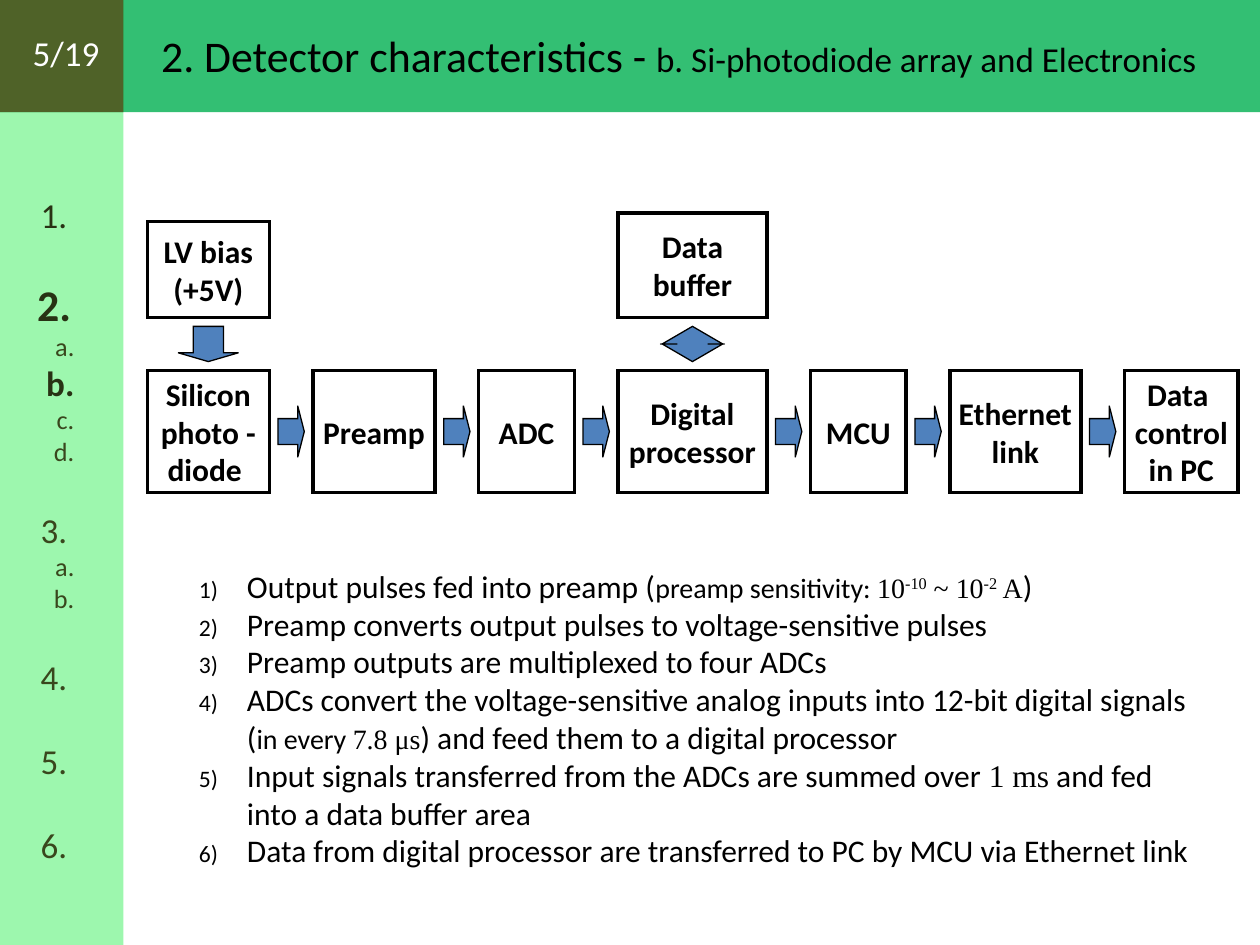
import pptx
import pptx.util
import pptx.dml.color
import pptx.enum.shapes
import pptx.enum.text
import pptx.oxml
import pptx.oxml.ns
from pptx.util import Cm

RGBColor = pptx.dml.color.RGBColor
Shapes = pptx.enum.shapes.MSO_SHAPE
Align = pptx.enum.text.PP_ALIGN

BLACK = RGBColor(0x00, 0x00, 0x00)
WHITE = RGBColor(0xFF, 0xFF, 0xFF)
MINT = RGBColor(0x7D, 0xF5, 0x94)
GREEN = RGBColor(0x00, 0xB0, 0x50)
OLIVE = RGBColor(0x4F, 0x62, 0x28)
DARK_OLIVE = RGBColor(0x28, 0x32, 0x14)
SOFT_OLIVE = RGBColor(0x39, 0x47, 0x1D)
BLUE = RGBColor(0x4F, 0x81, 0xBD)

SANS = "Calibri"
SERIF = "Times New Roman"


def add_child(parent, tag, **attributes):
    child = pptx.oxml.parse_xml(f"<{tag} {pptx.oxml.ns.nsdecls('a')}/>")
    for name, value in attributes.items():
        child.set(name, str(value))
    parent.append(child)


class Page:
    def __init__(self, slide):
        self.shapes = slide.shapes

    def shape(self, kind, left, top, width, height):
        shape = self.shapes.add_shape(kind, Cm(left), Cm(top), Cm(width), Cm(height))
        shape.shadow.inherit = False
        return shape

    def outline(self, shape, width):
        """Give the shape a black line with sharp corners."""
        shape.line.color.rgb = BLACK
        shape.line.width = pptx.util.Pt(width)
        add_child(shape.line._get_or_add_ln(), "a:miter", lim=800000)

    def band(self, width, height, color, opacity=100):
        band = self.shape(Shapes.RECTANGLE, 0, 0, width, height)
        band.fill.solid()
        band.fill.fore_color.rgb = color
        band.line.fill.background()
        if opacity < 100:
            color_node = band.fill._xPr.find(".//" + pptx.oxml.ns.qn("a:srgbClr"))
            add_child(color_node, "a:alpha", val=opacity * 1000)

    def block(self, left, top, width, height, text):
        block = self.shape(Shapes.RECTANGLE, left, top, width, height)
        block.fill.background()
        self.outline(block, 2)
        frame = block.text_frame
        frame.word_wrap = False
        frame.vertical_anchor = pptx.enum.text.MSO_ANCHOR.MIDDLE
        frame.text = text
        for para in frame.paragraphs:
            para.alignment = Align.CENTER
            self.style(para.runs[0], 18, bold=True)

    def arrow(self, kind, center_x, center_y, width, height, adjustments=(0.5, 0.25)):
        arrow = self.shape(kind, center_x - width / 2, center_y - height / 2, width, height)
        for index, value in enumerate(adjustments):
            arrow.adjustments[index] = value
        arrow.fill.solid()
        arrow.fill.fore_color.rgb = BLUE
        self.outline(arrow, 0.75)

    def style(self, span, size, font=SANS, color=BLACK, bold=False):
        span.font.size = pptx.util.Pt(size)
        span.font.name = font
        span.font.color.rgb = color
        span.font.bold = bold

    def text(self, left, top, width, height, lines):
        """Add a text box; each line is a list of (text, style) pairs."""
        box = self.shapes.add_textbox(Cm(left), Cm(top), Cm(width), Cm(height))
        frame = box.text_frame
        frame.word_wrap = True
        for number, line in enumerate(lines):
            para = frame.add_paragraph() if number else frame.paragraphs[0]
            for words, look in line:
                span = para.add_run()
                span.text = words
                self.style(span, **look)
        return frame.paragraphs

    def number(self, para):
        properties = para._p.get_or_add_pPr()
        properties.set("marL", str(Cm(0.97)))
        properties.set("indent", str(-Cm(0.97)))
        add_child(properties, "a:buSzPct", val=75000)
        add_child(properties, "a:buFont", typeface="+mj-lt")
        add_child(properties, "a:buAutoNum", type="arabicParenR")

    def superscript(self, span):
        span.font._element.set("baseline", "30000")


def draw_frame(page):
    page.band(2.49, 19.05, MINT, 75)
    page.band(25.4, 2.26, GREEN, 80)
    page.band(2.49, 2.26, OLIVE)


def draw_signal_chain(page):
    gap, row_top, row_height = 0.88, 7.47, 2.46
    upper_bottom = 6.4
    upper_middle = (upper_bottom + row_top) / 2
    stages = [("Silicon\nphoto -\ndiode ", 2.46), ("Preamp", 2.46), ("ADC", 1.93),
              ("Digital\nprocessor", 3), ("MCU", 1.93), ("Ethernet\nlink", 2.64),
              ("Data \ncontrol\nin PC", 2.29)]
    # The up-down arrow takes its head length first, then its stem width.
    upper = {0: ("LV bias\n(+5V)", 1.93, Shapes.DOWN_ARROW, (0.5, 0.25)),
             3: ("Data\nbuffer", 2.11, Shapes.UP_DOWN_ARROW, (0.2, 0.5))}
    left = 2.97
    for index, (label, width) in enumerate(stages):
        page.block(left, row_top, width, row_height, label)
        if index in upper:
            name, height, arrow, adjustments = upper[index]
            page.block(left, upper_bottom - height, width, height, name)
            page.arrow(arrow, left + width / 2, upper_middle, 1.22, 0.71, adjustments)
        if index:
            page.arrow(Shapes.RIGHT_ARROW, left - gap / 2, row_top + row_height / 2, 0.53, 1.04)
        left += width + gap


def draw_steps(page):
    body = {"size": 18}
    small = {"size": 16}
    value = {"size": 16, "font": SERIF}
    steps = [
        [("Output pulses fed into preamp (", body), ("preamp sensitivity: ", small),
         ("10", value), ("-10", value), (" ~ 10", value), ("-2", value), (" A", value),
         (")", body)],
        [("Preamp converts output pulses to voltage-sensitive pulses", body)],
        [("Preamp outputs are multiplexed to four ADCs", body)],
        [("ADCs convert the voltage-sensitive analog inputs into 12-bit digital signals (", body),
         ("in every ", small), ("7.8 μs", value),
         (") and feed them to a digital processor", body)],
        [("Input signals transferred from the ADCs are summed over ", body),
         ("1 ms", {"size": 18, "font": SERIF}), (" and fed into a data buffer area", body)],
        [("Data from digital processor are transferred to PC by MCU via Ethernet link", body)],
    ]
    paras = page.text(3.76, 11.3, 20.65, 6.4, steps)
    for para in paras:
        page.number(para)
    for exponent in (3, 5):
        page.superscript(paras[0].runs[exponent])


def draw_outline(page):
    section = {"size": 20, "color": SOFT_OLIVE}
    part = {"size": 15, "color": SOFT_OLIVE}
    entries = [("1.", {"size": 20, "color": DARK_OLIVE}),
               ("2.", {"size": 25, "color": DARK_OLIVE, "bold": True}),
               ("a.", part), ("b.", {"size": 20, "color": DARK_OLIVE, "bold": True}),
               ("c.", part), ("d.", part),
               ("3.", section), ("a.", part), ("b.", part),
               ("4.", section), ("5.", section), ("6.", section)]
    paras = page.text(0.43, 3.78, 1.32, 13.94, [[entry] for entry in entries])
    for index, para in enumerate(paras):
        is_section = para.text[0].isdigit()
        para.alignment = Align.CENTER if is_section else Align.RIGHT
        if is_section and index:
            para.space_before = pptx.util.Pt(24)


def main():
    deck = pptx.Presentation()
    deck.slide_width, deck.slide_height = Cm(25.4), Cm(19.05)
    page = Page(deck.slides.add_slide(deck.slide_layouts[6]))
    draw_frame(page)
    draw_signal_chain(page)
    draw_steps(page)
    page.text(3, 0.46, 22.4, 1.32, [[("2. Detector characteristics - ", {"size": 25}),
                                     ("b. Si-photodiode array and Electronics", {"size": 20})]])
    draw_outline(page)
    page.text(0.41, 0.51, 2.31, 1.12, [[("5/19", {"size": 20, "color": WHITE})]])
    deck.save("out.pptx")


if __name__ == "__main__":
    main()
